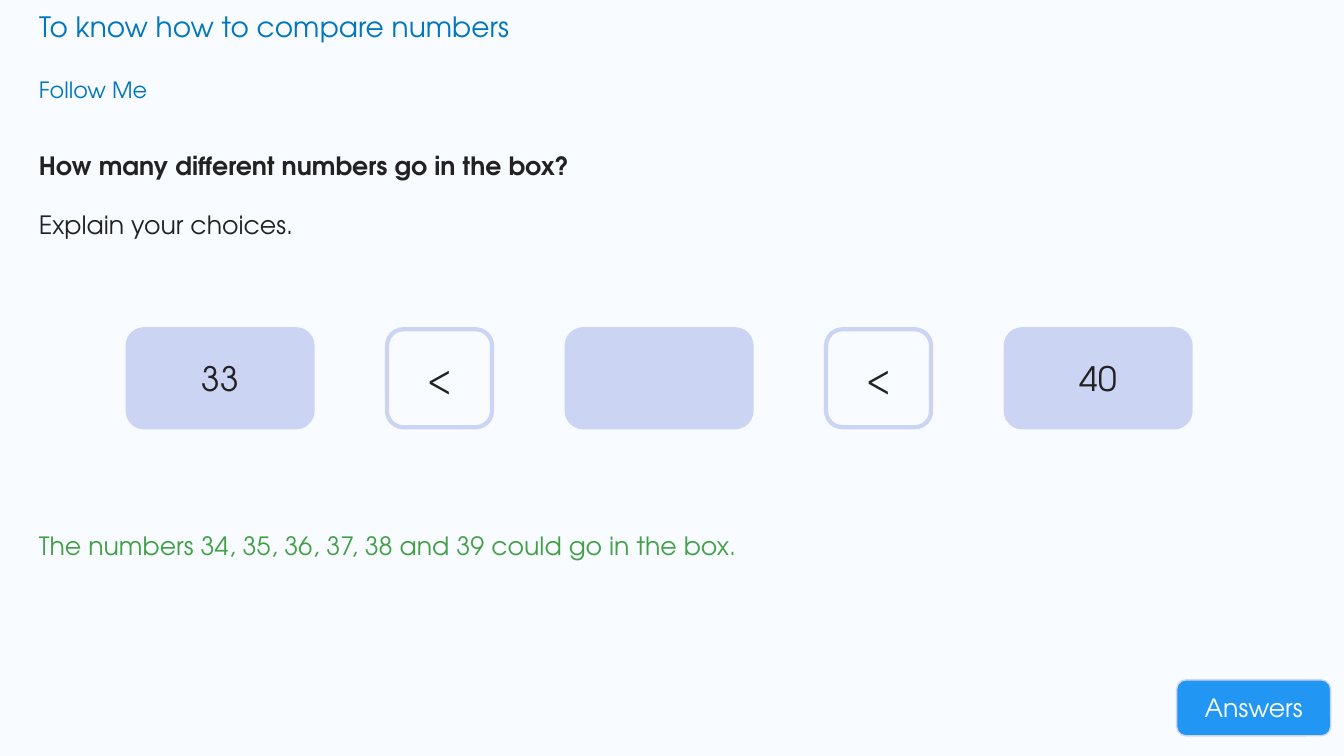
from dataclasses import dataclass

import pptx
import pptx.dml.color
import pptx.enum.shapes
import pptx.enum.text
import pptx.util

Pt = pptx.util.Pt
ALIGN = pptx.enum.text.PP_ALIGN
ANCHOR = pptx.enum.text.MSO_ANCHOR
FONT = "TeX Gyre Adventor"
BLUE, DARK, GREEN, LILAC = "0277BD", "222222", "43A047", "CCD4F4"


@dataclass
class Line:
    text: str
    size: float
    color: str
    bold: bool = False
    space: float = 1.0
    before: float = 0


@dataclass
class Box:
    left: float
    top: float
    width: float
    height: float


@dataclass
class Card:
    text: str
    width: float
    fill: str | None


def rgb(color: str) -> pptx.dml.color.RGBColor:
    return pptx.dml.color.RGBColor.from_string(color)


def write(shape, lines: list[Line], align=ALIGN.LEFT, anchor=ANCHOR.TOP) -> None:
    frame = shape.text_frame
    frame.word_wrap = True
    frame.auto_size = pptx.enum.text.MSO_AUTO_SIZE.NONE
    frame.vertical_anchor = anchor
    for i, line in enumerate(lines):
        para = frame.add_paragraph() if i else frame.paragraphs[0]
        para.alignment = align
        para.line_spacing = line.space
        para.space_before = Pt(line.before)
        run = para.add_run()
        run.text = line.text
        font = run.font
        font.name, font.size, font.bold = FONT, Pt(line.size), line.bold
        font.color.rgb = rgb(line.color)


def place(shape, box: Box) -> None:
    shape.left, shape.top = Pt(box.left), Pt(box.top)
    shape.width, shape.height = Pt(box.width), Pt(box.height)


def add_text(slide, box: Box, lines: list[Line]) -> None:
    shape = slide.shapes.add_textbox(0, 0, 0, 0)
    place(shape, box)
    write(shape, lines)


def add_card(slide, box: Box, fill: str | None, weight: float, line: Line) -> None:
    kind = pptx.enum.shapes.MSO_SHAPE.ROUNDED_RECTANGLE
    shape = slide.shapes.add_shape(kind, 0, 0, 0, 0)
    place(shape, box)
    shape.shadow.inherit = False
    if fill:
        shape.fill.solid()
        shape.fill.fore_color.rgb = rgb(fill)
    else:
        shape.fill.background()
    shape.line.color.rgb = rgb(LILAC)
    shape.line.width = Pt(weight)
    if line.text:
        write(shape, [line], ALIGN.CENTER, ANCHOR.MIDDLE)


def main() -> None:
    deck = pptx.Presentation()
    deck.slide_width, deck.slide_height = Pt(960), Pt(540)
    slide = deck.slides.add_slide(deck.slide_layouts[5])
    slide.background.fill.solid()
    slide.background.fill.fore_color.rgb = rgb("F8FBFF")

    # Title and question
    edge = 20.7
    title = slide.shapes.title
    place(title, Box(edge, 2.9, 888.5, 31.5))
    write(title, [Line("To know how to compare numbers", 20, BLUE)])
    add_text(slide, Box(edge, 51.1, 214, 33), [Line("Follow Me", 16, BLUE)])
    add_text(slide, Box(edge, 92.9, 924.5, 83), [
        Line("How many different numbers go in the box?", 18, DARK, True, 1.5),
        Line("Explain your choices.", 18, DARK, space=1.5, before=10),
    ])

    # Row of numbers and signs
    wide, slim, gap = 132, 75, 53.3
    sign = Card("<", slim, None)
    left = 91.2
    for card in [Card("33", wide, LILAC), sign, Card("", wide, LILAC),
                 sign, Card("40", wide, LILAC)]:
        box = Box(left, 235.2, card.width, 70)
        add_card(slide, box, card.fill, 3, Line(card.text, 24, DARK))
        left += card.width + gap

    # Answer and button
    add_text(slide, Box(edge, 364.3, 804, 36), [
        Line("The numbers 34, 35, 36, 37, 38 and 39 could go in the box.",
             18, GREEN, space=1.5),
    ])
    add_card(slide, Box(840.5, 485.6, 110, 40), "2196F3", 1,
             Line("Answers", 18, "FFFFFF"))

    deck.save("out.pptx")


if __name__ == "__main__":
    main()
